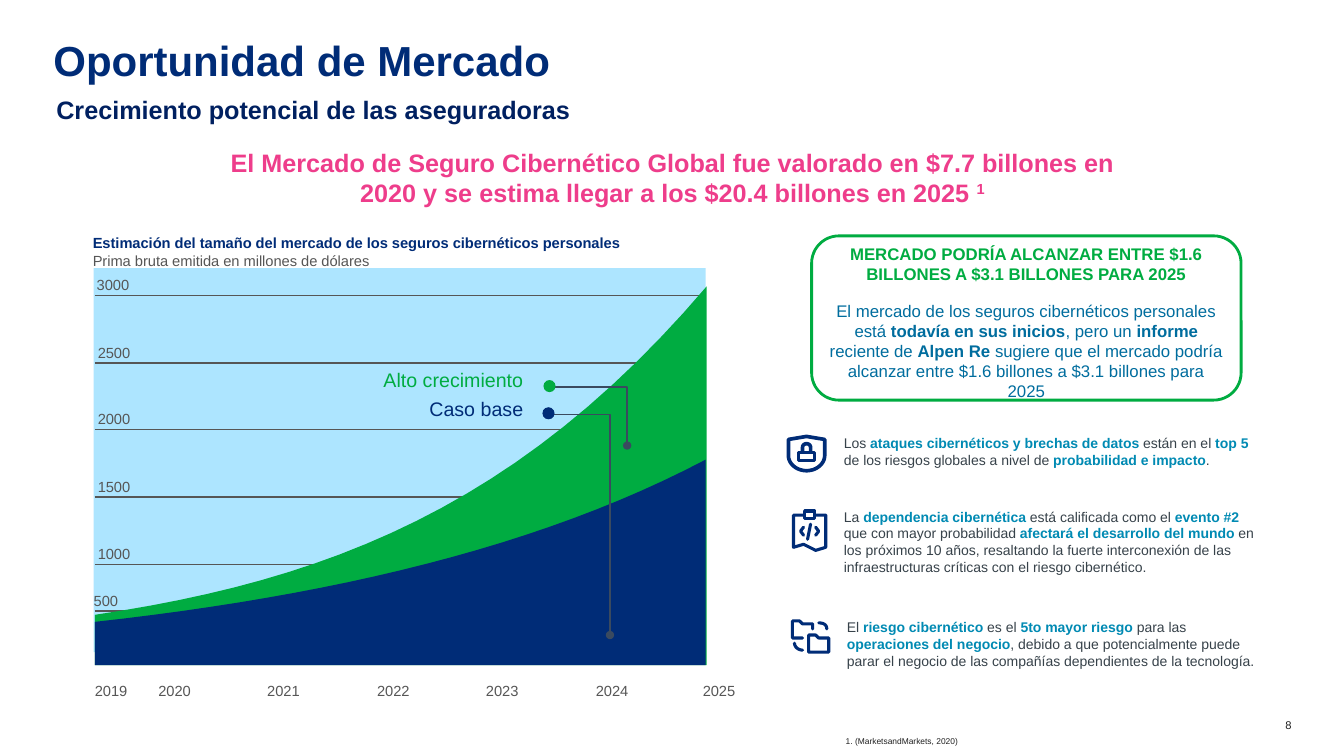
from pptx import Presentation
from pptx.dml.color import RGBColor
from pptx.enum.shapes import MSO_CONNECTOR, MSO_SHAPE
from pptx.enum.text import MSO_ANCHOR, MSO_AUTO_SIZE, PP_ALIGN
from pptx.oxml.ns import qn
from pptx.util import Pt
from lxml.etree import SubElement

PX = 9144
NAVY, GREEN, SKY, GREY, DARK = "002C77", "00AC41", "ADE5FF", "565656", "202020"
SLATE, TEAL, BLUE, PINK, LEADER = "37424A", "008AB3", "006D9E", "EE3D8B", "3A4A5F"
LEFT, CENTER, RIGHT = PP_ALIGN.LEFT, PP_ALIGN.CENTER, PP_ALIGN.RIGHT

TITLE = "Oportunidad de Mercado"
SUBTITLE = "Crecimiento potencial de las aseguradoras"
HEADLINE = ("El Mercado de Seguro Cibernético Global fue valorado en $7.7 billones en 2020 "
            "y se estima llegar a los $20.4 billones en 2025 ")
CHART_TITLE = ["*Estimación del tamaño del mercado de los seguros cibernéticos personales*",
               "Prima bruta emitida en millones de dólares"]
LEVELS = [("3000", 293, 96), ("2500", 360, 97), ("2000", 426, 97),
          ("1500", 493, 97), ("1000", 560, 97), ("500", 606, 93)]
YEARS = ["2019", "2020", "2021", "2022", "2023", "2024", "2025"]
YEAR_XS = [94] + [157 + 434 * i // 4 for i in range(5)] + [697]
AREAS = [
    (GREEN, [(701, 660), (94, 660), (94, 610), (323, 576, 514, 504, 701, 284)]),
    (NAVY, [(700, 660), (94, 660), (94, 617), (329, 591, 535, 543, 700, 456)]),
]
LEADERS = [[(545, 411), (605, 411), (605, 630)], [(547, 384), (622, 384), (622, 442)]]
LEGEND = [("Alto crecimiento", GREEN, 365, 539, 377), ("Caso base", NAVY, 394, 538, 404)]
CALLOUT = [
    "MERCADO PODRÍA ALCANZAR ENTRE $1.6 BILLONES A $3.1 BILLONES PARA 2025",
    "El mercado de los seguros cibernéticos personales está *todavía en sus inicios*, pero un "
    "*informe* reciente de *Alpen Re *sugiere que el mercado podría alcanzar entre "
    "$1.6 billones a $3.1 billones para 2025",
]
RISKS = [
    (837, 431, 32, "Los *ataques cibernéticos y brechas de datos *están en el *top 5* de los "
     "riesgos globales a nivel de *probabilidad e impacto*."),
    (837, 504, 64, "La *dependencia cibernética *está calificada como el *evento #2* que con mayor "
     "probabilidad *afectará el desarrollo del mundo *en los próximos 10 años, resaltando la "
     "fuerte interconexión de las infraestructuras críticas con el riesgo cibernético."),
    (840, 614, 48, "El *riesgo cibernético *es el *5to mayor riesgo *para las *operaciones del "
     "negocio*, debido a que potencialmente puede parar el negocio de las compañías "
     "dependientes de la tecnología."),
]
SHIELD = [
    (True, [(800, 433), (818, 436), (818, 452), (818, 460, 810, 467, 800, 467),
            (790, 467, 782, 460, 782, 452), (782, 436)]),
    (True, [(792, 449), (808, 449), (808, 457), (792, 457)]),
    (False, [(796, 448), (796, 444), (796, 439, 804, 439, 804, 444), (804, 448)]),
]
CLIPBOARD = [
    (True, [(787, 511), (819, 511), (819, 543), (809, 546), (797, 540), (787, 543)]),
    (True, [(798, 507), (808, 507), (808, 514), (798, 514)]),
    (False, [(797, 523), (794, 527), (797, 531)]),
    (False, [(809, 523), (812, 527), (809, 531)]),
    (False, [(804, 520), (801, 535)]),
]
FOLDERS = [
    (False, [(796, 633), (786, 633), (786, 616), (793, 616), (796, 619), (806, 619), (806, 624)]),
    (True, [(802, 630), (809, 630), (812, 633), (822, 633), (822, 647), (802, 647)]),
    (False, [(788, 638), (788, 642, 792, 645, 796, 645)]),
    (False, [(812, 618), (817, 618, 820, 620, 820, 624)]),
]


def rgb(color):
    return RGBColor.from_string(color)


def box(x, y, w, h):
    return [v * PX for v in (x, y, w, h)]


def write(tf, paras, size, color, bold=False, align=LEFT, accent=None):
    """Fill a text frame; words between asterisks are bold and take the accent colour."""
    tf.text = "\n".join(para.replace("*", "") for para in paras)
    for p, para in zip(tf.paragraphs, paras):
        p.text = ""
        p.alignment = align
        for i, part in enumerate(para.split("*")):
            if part:
                r = p.add_run()
                r.text = part
                r.font.name, r.font.size = "Arial", Pt(size)
                r.font.bold = bold or i % 2 == 1
                r.font.color.rgb = rgb(accent if accent and i % 2 else color)


def margins(tf, left, top):
    tf.margin_left = tf.margin_right = left * PX
    tf.margin_top = tf.margin_bottom = top * PX


def text(s, frame, paras, size, color, inset=(0, 0), wrap=True, **style):
    tf = s.shapes.add_textbox(*box(*frame)).text_frame
    tf.word_wrap = wrap
    margins(tf, *inset)
    write(tf, paras, size, color, **style)
    return tf


def paint(sp, fill=None, line=None, width=1):
    sp.shadow.inherit = False
    if fill:
        sp.fill.solid()
        sp.fill.fore_color.rgb = rgb(fill)
    else:
        sp.fill.background()
    if line:
        sp.line.color.rgb = rgb(line)
        sp.line.width = Pt(width)
    else:
        sp.line.fill.background()
    return sp


def flatten(points, steps=24):
    """Turn a list of corners and cubic curves into plain points."""
    out = [points[0]]
    for point in points[1:]:
        if len(point) == 2:
            out.append(point)
            continue
        ctrl = [out[-1], point[:2], point[2:4], point[4:]]
        for i in range(1, steps + 1):
            t = i / steps
            weights = [(1 - t) ** 3, 3 * t * (1 - t) ** 2, 3 * t * t * (1 - t), t ** 3]
            out.append(tuple(sum(w * c[k] for w, c in zip(weights, ctrl)) for k in (0, 1)))
    return out


def outline(s, points, closed, **look):
    pts = [(x * PX, y * PX) for x, y in flatten(points)]
    fb = s.shapes.build_freeform(*pts[0])
    fb.add_line_segments(pts[1:], close=closed)
    return paint(fb.convert_to_shape(), **look)


def draw_chart(s):
    text(s, (92, 232, 608, 42), CHART_TITLE, 10.5, GREY, accent=NAVY)
    paint(s.shapes.add_shape(MSO_SHAPE.RECTANGLE, *box(93, 266, 607, 381)), SKY)
    for _, y, _ in LEVELS:
        ends = [v * PX for v in (94, y, 700, y)]
        grid = s.shapes.add_connector(MSO_CONNECTOR.STRAIGHT, *ends)
        grid.line.color.rgb = rgb(GREY)
        grid.line.width = Pt(1)
        SubElement(grid._element.spPr, qn("a:effectLst"))
    for color, points in AREAS:
        outline(s, points, True, fill=color)
    for points in LEADERS:
        sp = outline(s, points, False, line=LEADER)
        SubElement(sp.line._get_or_add_ln(), qn("a:tailEnd"), type="oval")
    for label, y, x in LEVELS:
        text(s, (x, y - 19, 57, 18), [label], 10.5, GREY)
    for label, color, y, dot_x, dot_y in LEGEND:
        text(s, (374, y, 145, 20), [label], 14, color, align=RIGHT)
        paint(s.shapes.add_shape(MSO_SHAPE.OVAL, *box(dot_x, dot_y, 12, 12)), color)
    for year, x in zip(YEARS, YEAR_XS):
        text(s, (x, 676, 39, 20), [year], 10.5, GREY)


def draw_callout(s):
    sp = s.shapes.add_shape(MSO_SHAPE.ROUNDED_RECTANGLE, *box(805, 234, 426, 163))
    tf = paint(sp, "FFFFFF", GREEN, 2).text_frame
    tf.word_wrap = True
    tf.vertical_anchor = MSO_ANCHOR.TOP
    margins(tf, 8, 0)
    write(tf, CALLOUT, 12, BLUE, align=CENTER)
    tf.paragraphs[1].space_before = Pt(11.5)
    heading = tf.paragraphs[0].runs[0].font
    heading.bold, heading.color.rgb = True, rgb(GREEN)


def draw_risks(s):
    for icon, width in ((SHIELD, 2.6), (CLIPBOARD, 2.2), (FOLDERS, 2.2)):
        for closed, points in icon:
            sp = outline(s, points, closed, fill="FFFFFF" if closed else None, line=NAVY, width=width)
            sp.line._get_or_add_ln().set("cap", "rnd")
    for x, y, h, para in RISKS:
        text(s, (x, y, 413, h), [para], 10, SLATE, accent=TEAL)


def main():
    prs = Presentation()
    prs.slide_width, prs.slide_height = 1333 * PX, 750 * PX
    s = prs.slides.add_slide(prs.slide_layouts[5])
    title = s.shapes.title
    title.left, title.top, title.width, title.height = box(53, 34, 1227, 48)
    tf = title.text_frame
    tf.auto_size = MSO_AUTO_SIZE.NONE
    tf.vertical_anchor = MSO_ANCHOR.TOP
    margins(tf, 0, 0)
    write(tf, [TITLE], 30, NAVY, bold=True)
    text(s, (46, 89, 1228, 35), [SUBTITLE], 18, "002060", (10, 5), bold=True)
    tf = text(s, (200, 141, 934, 71), [HEADLINE + "*1*"], 18, PINK, (10, 5), bold=True, align=CENTER)
    tf.paragraphs[0].runs[-1].font._element.set("baseline", "30000")
    draw_chart(s)
    draw_callout(s)
    draw_risks(s)
    text(s, (1250, 713, 31, 13), ["8"], 8, DARK, align=RIGHT)
    text(s, (829, 725, 133, 20), ["1. (MarketsandMarkets, 2020)"], 6, DARK, (10, 5), wrap=False)
    prs.save("out.pptx")


if __name__ == "__main__":
    main()
